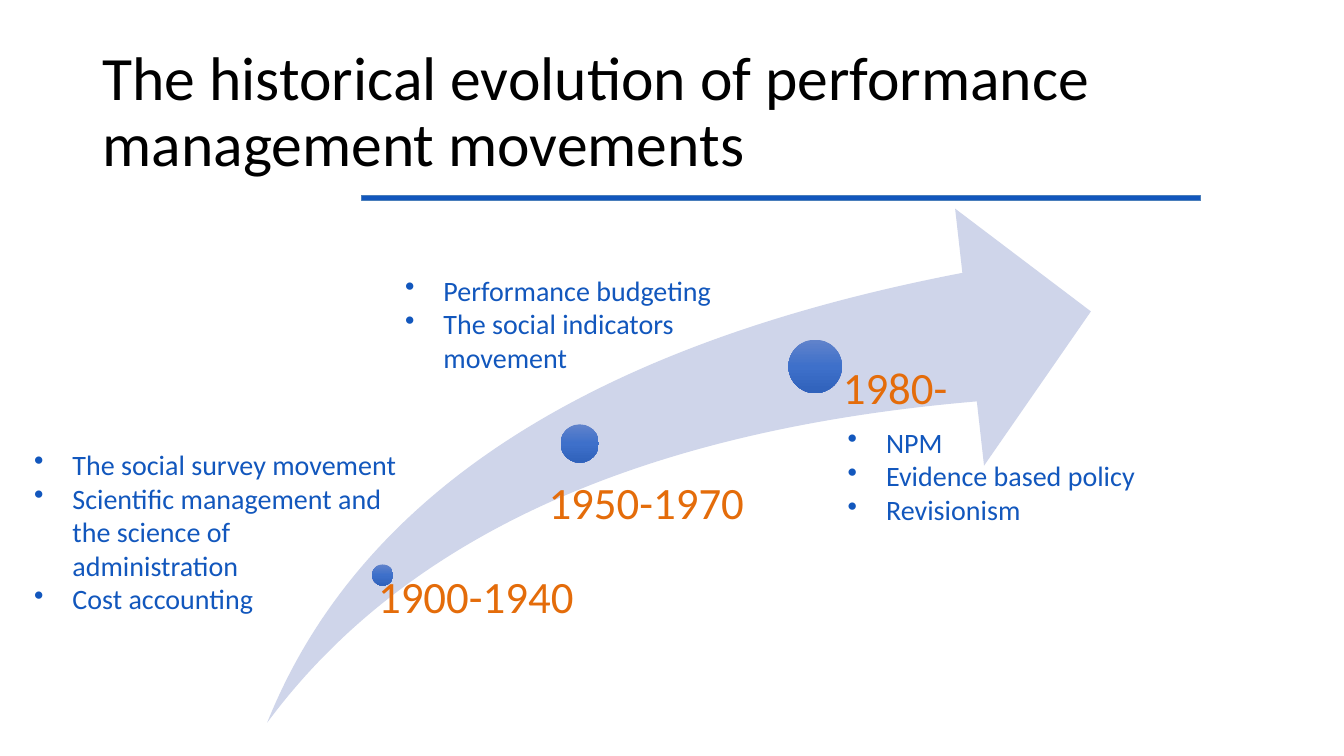
import lxml.etree
import pptx
import pptx.dml.color
import pptx.enum.shapes
import pptx.enum.text
import pptx.oxml.ns
import pptx.util

Inches = pptx.util.Inches
Pt = pptx.util.Pt
RGBColor = pptx.dml.color.RGBColor
SHAPE = pptx.enum.shapes.MSO_SHAPE
ANCHOR = pptx.enum.text.MSO_ANCHOR
qn = pptx.oxml.ns.qn

BLACK = RGBColor(0x00, 0x00, 0x00)
BLUE = RGBColor(0x12, 0x57, 0xBD)
RULE_EDGE = RGBColor(0x4A, 0x7E, 0xBB)
PALE_BLUE = RGBColor(0xCF, 0xD5, 0xEA)
ORANGE = RGBColor(0xE4, 0x6C, 0x0A)
DOT_STOPS = [
    (0, RGBColor(0x61, 0x83, 0xCB)),
    (50, RGBColor(0x3E, 0x70, 0xCA)),
    (100, RGBColor(0x30, 0x62, 0xBB)),
]


class TimelineSlide:
    font = "Calibri"
    bullet_indent = Inches(0.38)

    def __init__(self, slide):
        self.shapes = slide.shapes

    def shape(self, kind, box, fill=None, edge=None):
        item = self.shapes.add_shape(kind, *map(Inches, box))
        item.shadow.inherit = False
        if fill is not None:
            item.fill.solid()
            item.fill.fore_color.rgb = fill
        if edge is None:
            item.line.fill.background()
        else:
            item.line.color.rgb = edge
            item.line.width = Pt(0.75)
        return item

    def dot(self, left, top, size):
        dot = self.shape(SHAPE.OVAL, (left, top, size, size))
        dot.fill.gradient()
        dot.fill.gradient_angle = 270
        # Replace the default stops with the three-step shading
        stops = dot.fill.gradient_stops
        stop_list = next(dot.element.iter(qn("a:gsLst")))
        for old_stop in list(stop_list):
            stop_list.remove(old_stop)
        for percent, color in DOT_STOPS:
            stop = lxml.etree.SubElement(stop_list, qn("a:gs"), pos=str(percent * 1000))
            lxml.etree.SubElement(stop, qn("a:srgbClr"), val=str(color))

    def text(self, box, lines, size, color, spacing=None):
        frame = self.shapes.add_textbox(*map(Inches, box)).text_frame
        frame.word_wrap = True
        frame.text = "\n".join(lines)
        for paragraph in frame.paragraphs:
            paragraph.font.name = self.font
            paragraph.font.size = Pt(size)
            paragraph.font.color.rgb = color
            paragraph.line_spacing = spacing
        return frame

    def title(self, box, wording):
        frame = self.text(box, [wording], 44, BLACK, 0.9)
        frame.vertical_anchor = ANCHOR.MIDDLE

    def period(self, box, inset, years):
        frame = self.text(box, [years], 32, ORANGE, 0.9)
        frame.margin_left = Inches(inset)
        frame.margin_top = frame.margin_right = frame.margin_bottom = 0

    def bullets(self, box, lines):
        frame = self.text(box, lines, 20, BLUE)
        for paragraph in frame.paragraphs:
            properties = paragraph._p.get_or_add_pPr()
            properties.set("marL", str(self.bullet_indent))
            properties.set("indent", str(-self.bullet_indent))
            # The bullet goes before the default run properties
            bullet = lxml.etree.Element(qn("a:buChar"), char="•")
            properties.find(qn("a:defRPr")).addprevious(bullet)


def main():
    deck = pptx.Presentation()
    deck.slide_width = Inches(13.33)
    deck.slide_height = Inches(7.5)
    timeline = TimelineSlide(deck.slides.add_slide(deck.slide_layouts[6]))

    # Title and rule
    timeline.title((0.92, 0.4, 11.5, 1.45),
                   "The historical evolution of performance management movements")
    timeline.shape(SHAPE.RECTANGLE, (3.59, 1.94, 8.32, 0.05), BLUE, RULE_EDGE)

    # Rising arrow
    arrow = timeline.shape(SHAPE.SWOOSH_ARROW, (2.65, 2.07, 8.17, 5.1), PALE_BLUE)
    arrow.adjustments[0] = 0.25
    arrow.adjustments[1] = 0.25

    # Periods: dot, label box, label inset, years
    periods = [
        ((3.69, 5.6, 0.21), (3.64, 5.7, 3.98, 1.48), 0.11, "1900-1940"),
        ((5.56, 4.21, 0.38), (5.24, 4.77, 3.11, 1.48), 0.2, "1950-1970"),
        ((7.82, 3.37, 0.53), (8.08, 3.63, 1.96, 3.55), 0.28, "1980-"),
    ]
    for dot, label_box, inset, years in periods:
        timeline.dot(*dot)
        timeline.period(label_box, inset, years)

    # Movements of each period
    timeline.bullets((0.24, 4.39, 3.84, 1.78), [
        "The social survey movement",
        "Scientific management and the science of administration",
        "Cost accounting",
    ])
    timeline.bullets((3.92, 2.66, 3.6, 1.11), [
        "Performance budgeting",
        "The social indicators movement",
    ])
    timeline.bullets((8.31, 4.17, 3.36, 1.11), [
        "NPM",
        "Evidence based policy",
        "Revisionism",
    ])

    deck.save("out.pptx")


if __name__ == "__main__":
    main()
